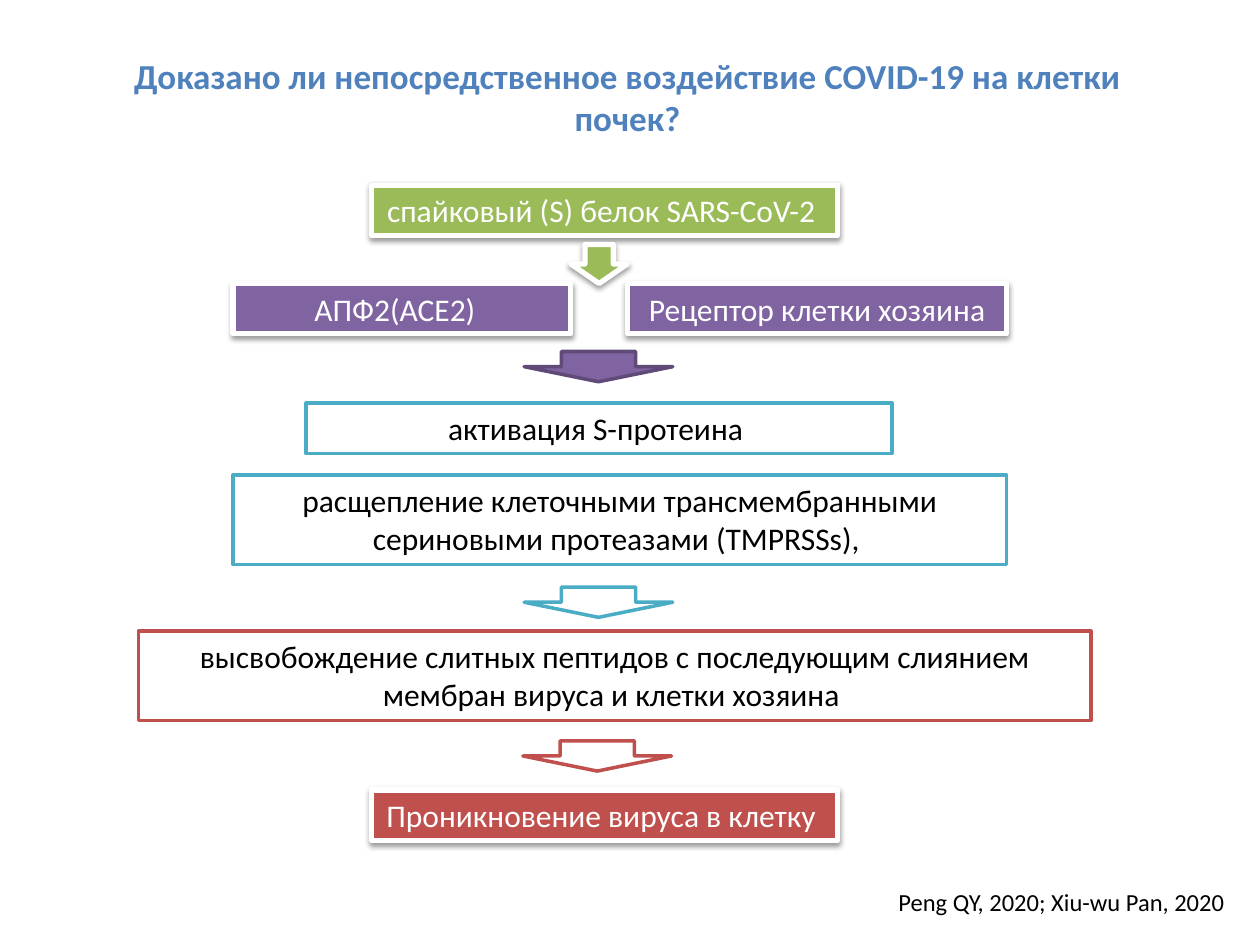
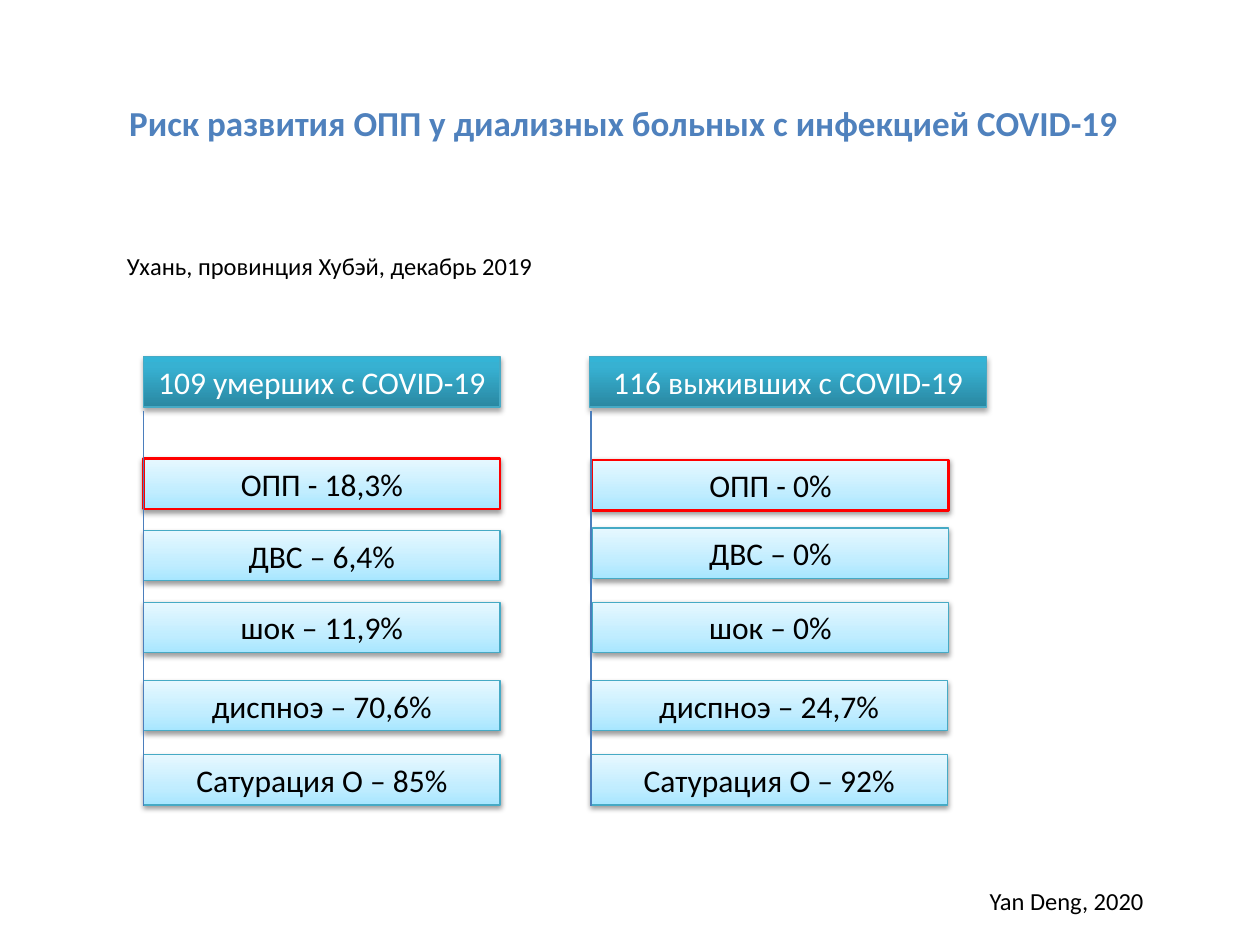
import pptx
import pptx.util
import pptx.dml.color
import pptx.enum.shapes
import pptx.enum.text
import pptx.oxml
import pptx.oxml.ns

Inches, Pt = pptx.util.Inches, pptx.util.Pt
RGB = pptx.dml.color.RGBColor.from_string
KIND = pptx.enum.shapes.MSO_SHAPE
ALIGN = pptx.enum.text.PP_ALIGN

HEX = dict(
    title="4F81BD", text="000000", white="FFFFFF", green="9BBB59",
    plum="8064A2", plum_edge="5F4A78", teal="4BACC6", red="C0504D",
    edge="46AAC5", alert="FF0000", stem="4B7EBC",
)
FONT = "Calibri"

# Gradient stops, from the bottom edge upward
HEAD_FILL = [(0, "2A88A2"), (80, "37B1D2"), (100, "34B4D6")]
ROW_FILL = [(0, "A7E6FF"), (35, "C1EDFF"), (100, "E7F8FF")]

# Looks: fill, line, line width, text colour, shadow (opacity, distance)
SOFT = (38, 1.6)
LOOKS = dict(
    green=("green", "white", 3, "white", SOFT),
    plum=("plum", "white", 3, "white", SOFT),
    red=("red", "white", 3, "white", SOFT),
    dark=("plum", "plum_edge", 2, "white", None),
    teal_out=("white", "teal", 2, "text", None),
    red_out=("white", "red", 2, "text", None),
    head=(HEAD_FILL, "edge", 0.75, "white", (35, 1.8)),
    row=(ROW_FILL, "edge", 0.75, "text", SOFT),
    alert=(ROW_FILL, "alert", 1.5, "text", SOFT),
)

# Slide 1: text, place, look
STEPS = [
    ("спайковый (S) белок SARS-CoV-2 ", (2.95, 1.47, 3.7, 0.4), "green"),
    ("АПФ2(ACE2)", (1.85, 2.25, 2.57, 0.4), "plum"),
    ("Рецептор клетки хозяина", (4.98, 2.25, 3.01, 0.4), "plum"),
    ("активация S-протеина ", (2.43, 3.2, 4.65, 0.4), "teal_out"),
    ("расщепление клеточными трансмембранными сериновыми протеазами (TMPRSSs), ",
     (1.85, 3.77, 6.14, 0.71), "teal_out"),
    ("высвобождение слитных пептидов с последующим слиянием мембран вируса "
     "и клетки хозяина ", (1.1, 5.01, 7.56, 0.71), "red_out"),
    ("Проникновение вируса в клетку ", (2.95, 6.27, 3.7, 0.4), "red"),
]
WIDE_TEXT = {"АПФ2(ACE2)": 0.11}  # wider box, text kept left of centre
ARROWS = [
    ((4.53, 1.94, 0.45, 0.31), "green"),
    ((4.16, 2.79, 1.18, 0.24), "dark"),
    ((4.16, 4.66, 1.18, 0.24), "teal_out"),
    ((4.15, 5.88, 1.18, 0.24), "red_out"),
]

# Slide 2: heading, its left and width, then rows as text, left, top
GROUPS = [
    ("109 умерших с COVID-19", 1.14, 2.83, [
        ("ОПП - 18,3%", 1.14, 3.64), ("ДВС – 6,4%", 1.14, 4.21),
        ("шок – 11,9%", 1.14, 4.78), ("диспноэ – 70,6%", 1.14, 5.4),
        ("Сатурация О – 85%", 1.14, 5.99)]),
    ("116 выживших с COVID-19", 4.68, 3.15, [
        ("ОПП - 0%", 4.7, 3.65), ("ДВС – 0%", 4.7, 4.19),
        ("шок – 0%", 4.7, 4.78), ("диспноэ – 24,7%", 4.69, 5.4),
        ("Сатурация О – 92%", 4.69, 5.99)]),
]
HEAD_TOP, ROW_WIDE, ROW_HIGH = 2.83, 2.83, 0.4
STEM_TOP, STEM_END = 3.26, 6.4


def node(xml):
    return pptx.oxml.parse_xml(xml.replace(">", f" {pptx.oxml.ns.nsdecls('a')}>", 1))


def write(shape, text, size, tone, bold=False, align=ALIGN.CENTER):
    frame = shape.text_frame
    frame.word_wrap = True
    frame.auto_size = pptx.enum.text.MSO_AUTO_SIZE.SHAPE_TO_FIT_TEXT
    frame.vertical_anchor = pptx.enum.text.MSO_ANCHOR.TOP
    frame.text = text
    para = frame.paragraphs[0]
    para.alignment = align
    font = para.runs[0].font
    font.name, font.size, font.bold = FONT, Pt(size), bold
    font.color.rgb = RGB(HEX[tone])


def label(slide, text, place, size=14, tone="text", **style):
    box = slide.shapes.add_textbox(*map(Inches, place))
    write(box, text, size, tone, **style)


def blend(fill, stops):
    fill.gradient()
    fill.gradient_angle = 90
    items = "".join(f'<a:gs pos="{at * 1000}"><a:srgbClr val="{tone}"/></a:gs>'
                    for at, tone in stops)
    props = fill.gradient_stops  # makes sure the stop list exists
    assert len(props) > 0
    return node(f"<a:gsLst>{items}</a:gsLst>")


def block(slide, place, look, text=None, kind=KIND.RECTANGLE):
    fill, edge, width, tone, shade = LOOKS[look]
    shape = slide.shapes.add_shape(kind, *map(Inches, place))
    shape.shadow.inherit = False
    tree = shape.element.spPr
    if isinstance(fill, list):
        stops = blend(shape.fill, fill)
        old = tree.find(".//" + pptx.oxml.ns.qn("a:gsLst"))
        old.getparent().replace(old, stops)
    else:
        shape.fill.solid()
        shape.fill.fore_color.rgb = RGB(HEX[fill])
    shape.line.color.rgb = RGB(HEX[edge])
    shape.line.width = Pt(width)
    if shade:
        alpha, gap = shade
        tree.find(pptx.oxml.ns.qn("a:effectLst")).append(node(
            f'<a:outerShdw blurRad="{Pt(3.1)}" dist="{Pt(gap)}" dir="5400000" rotWithShape="0">'
            f'<a:srgbClr val="000000"><a:alpha val="{alpha * 1000}"/></a:srgbClr></a:outerShdw>'))
    if text:
        write(shape, text, 18, tone)
    return shape


def stem(slide, left):
    line = slide.shapes.add_connector(
        pptx.enum.shapes.MSO_CONNECTOR.STRAIGHT,
        *map(Inches, (left, STEM_TOP, left, STEM_END)))
    line.line.color.rgb = RGB(HEX["stem"])
    line.line.width = Pt(0.75)
    line.element.spPr.append(node("<a:effectLst></a:effectLst>"))


def start(deck, title, place, source, spot):
    slide = deck.slides.add_slide(deck.slide_layouts[6])
    label(slide, title, place, 20, "title", bold=True)
    label(slide, source, spot)
    return slide


def main():
    deck = pptx.Presentation()
    deck.slide_width, deck.slide_height = Inches(10), Inches(7.5)

    # Slide 1: path of the virus into the cell
    slide = start(
        deck, "Доказано ли непосредственное воздействие COVID-19 на клетки почек?",
        (0.84, 0.38, 8.28, 0.77),
        "Peng QY, 2020; Xiu-wu Pan, 2020", (6.97, 6.99, 2.91, 0.34))
    for text, (left, top, wide, high), look in STEPS:
        extra = WIDE_TEXT.get(text, 0)
        box = block(slide, (left, top, wide + extra, high), look, text)
        box.text_frame.margin_right = Inches(0.1 + extra)
    for place, look in ARROWS:
        block(slide, place, look, kind=KIND.DOWN_ARROW)

    # Slide 2: two groups of patients
    slide = start(
        deck, "Риск развития ОПП у диализных больных с инфекцией COVID-19",
        (0.81, 0.76, 8.28, 0.44), "Yan Deng, 2020", (7.44, 6.98, 2.05, 0.34))
    label(slide, "Ухань, провинция Хубэй, декабрь 2019",
          (0.91, 1.94, 3.94, 0.34), align=ALIGN.LEFT)
    for head, left, wide, rows in GROUPS:
        block(slide, (left, HEAD_TOP, wide, ROW_HIGH), "head", head)
        for rank, (text, side, top) in enumerate(rows):
            look = "row" if rank else "alert"
            block(slide, (side, top, ROW_WIDE, ROW_HIGH), look, text)
        stem(slide, rows[-1][1])

    deck.save("out.pptx")


if __name__ == "__main__":
    main()
